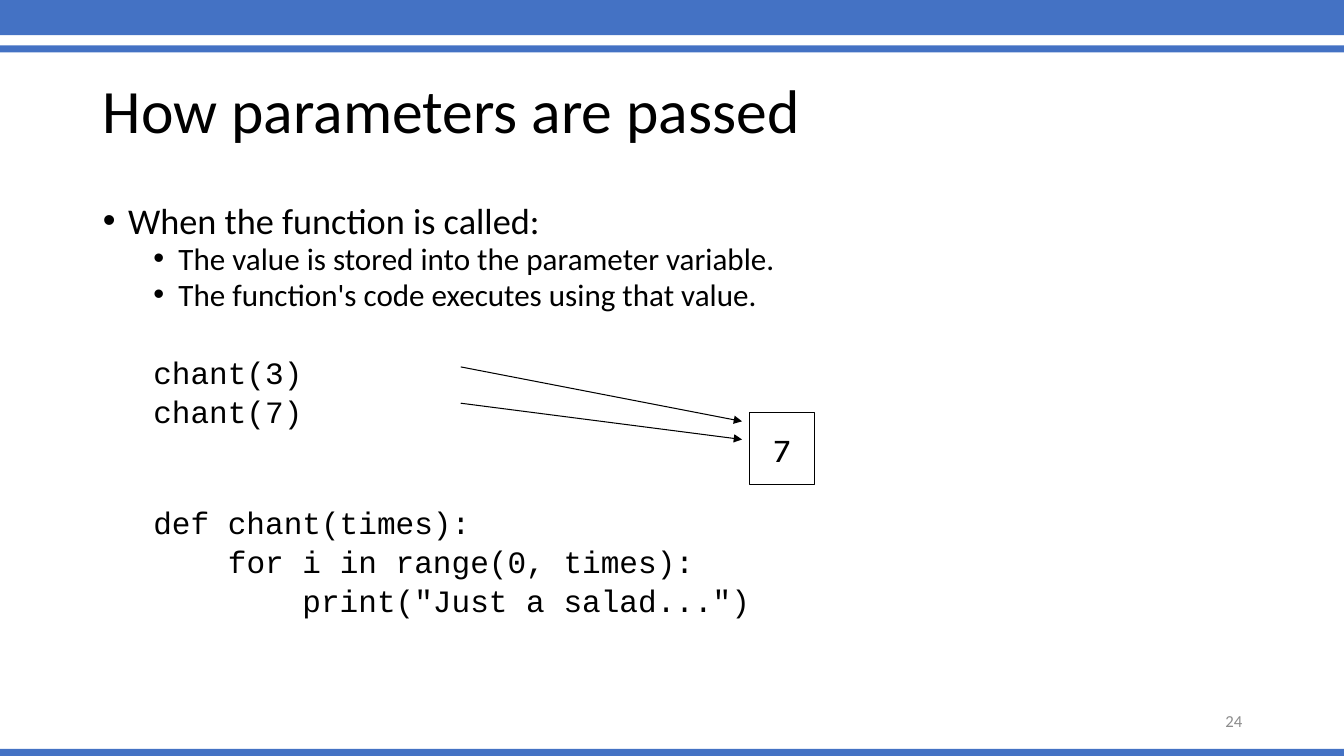
from pptx import Presentation
from pptx.dml.color import RGBColor
from pptx.enum.shapes import MSO_CONNECTOR as CONN, MSO_SHAPE as SHAPE
from pptx.enum.text import MSO_ANCHOR as ANCHOR, MSO_AUTO_SIZE as AUTO, PP_ALIGN as ALIGN
from pptx.oxml.ns import qn
from pptx.util import Inches, Pt
from lxml import etree

BLUE = RGBColor(0x44, 0x72, 0xC4)
BLACK = RGBColor(0, 0, 0)
WHITE = RGBColor(0xFF, 0xFF, 0xFF)
GRAY = RGBColor(0x8C, 0x8C, 0x8C)


def add_run(p, text, size, font, color=BLACK):
    r = p.add_run()
    r.text = text
    r.font.size, r.font.name = Pt(size), font
    r.font.color.rgb = color


def add_rect(left, top, width, height, fill):
    sp = s.shapes.add_shape(SHAPE.RECTANGLE, Inches(left), Inches(top),
                            Inches(width), Inches(height))
    sp.shadow.inherit = False
    sp.fill.solid()
    sp.fill.fore_color.rgb = fill
    sp.line.fill.background()
    return sp


prs = Presentation()
prs.slide_width, prs.slide_height = Inches(13.33), Inches(7.5)
s = prs.slides.add_slide(prs.slide_layouts[1])

# Blue bands at the top and bottom
for top, height in [(-0.03, 0.38), (0.45, 0.07), (7.43, 0.07)]:
    add_rect(0, top, 13.33, height, BLUE)

# Title
title = s.shapes.title
title.left, title.top = Inches(0.92), Inches(0.4)
title.width, title.height = Inches(11.5), Inches(1.45)
tf = title.text_frame
tf.auto_size, tf.vertical_anchor = AUTO.NONE, ANCHOR.MIDDLE
p = tf.paragraphs[0]
p.alignment, p.line_spacing = ALIGN.LEFT, 0.9
add_run(p, "How parameters are passed", 44, "Calibri")

# Body: text, level, left margin, space before, size, font
SANS, MONO = "Calibri", "Courier New"
CODE_LEFT, CODE_STEP = 0.5, 0.74
lines = [
    ("When the function is called:", 0, 0.25, 10, 25.9, SANS),
    ("The value is stored into the parameter variable.", 1, 0.75, 4, 22.2, SANS),
    ("The function's code executes using that value.", 1, 0.75, 4, 22.2, SANS),
    ("chant(3)", 1, CODE_LEFT, 34.5, 22.2, MONO),
    ("chant(7)", 1, CODE_LEFT, 6.3, 22.2, MONO),
    ("def chant(times):", 1, CODE_LEFT, 58.5, 22.2, MONO),
    ("for i in range(0, times):", 1, CODE_LEFT + CODE_STEP, 6.3, 22.2, MONO),
    ('print("Just a salad...")', 1, CODE_LEFT + 2 * CODE_STEP, 6.3, 22.2, MONO),
]
body = s.placeholders[1]
body.left, body.top = Inches(0.92), Inches(2)
body.width, body.height = Inches(11.5), Inches(4.76)
tf = body.text_frame
tf.auto_size = AUTO.NONE
for i, (text, level, left, before, size, font) in enumerate(lines):
    p = tf.add_paragraph() if i else tf.paragraphs[0]
    p.level, p.line_spacing, p.space_before = level, 0.8, Pt(before)
    pPr = p._p.get_or_add_pPr()
    pPr.set("marL", str(Inches(left)))
    if font == SANS:
        pPr.set("indent", str(Inches(-0.25)))
        etree.SubElement(pPr, qn("a:buFont"), typeface="Arial")
        etree.SubElement(pPr, qn("a:buChar"), char="•")
    else:
        pPr.set("indent", "0")
        etree.SubElement(pPr, qn("a:buNone"))
    add_run(p, text, size, font)

# Box holding the parameter value
box = add_rect(7.43, 4.09, 0.65, 0.72, WHITE)
box.line.color.rgb, box.line.width = BLACK, Pt(0.75)
tf = box.text_frame
tf.word_wrap, tf.vertical_anchor = False, ANCHOR.MIDDLE
p = tf.paragraphs[0]
p.alignment = ALIGN.CENTER
add_run(p, "7", 24, "Karla")

# Arrows from the calls to the box
for start_y, end_y in [(3.64, 4.18), (4, 4.36)]:
    arrow = s.shapes.add_connector(CONN.STRAIGHT, Inches(4.57), Inches(start_y),
                                   Inches(7.36), Inches(end_y))
    arrow.line.color.rgb, arrow.line.width = BLACK, Pt(0.75)
    etree.SubElement(arrow.line._get_or_add_ln(), qn("a:tailEnd"), type="triangle")
    etree.SubElement(arrow._element.spPr, qn("a:effectLst"))

# Slide number
number = s.shapes.add_textbox(Inches(9.42), Inches(6.95), Inches(3), Inches(0.4))
tf = number.text_frame
tf.word_wrap, tf.vertical_anchor = True, ANCHOR.MIDDLE
p = tf.paragraphs[0]
p.alignment = ALIGN.RIGHT
add_run(p, "24", 12, "Calibri", GRAY)

prs.save("out.pptx")
